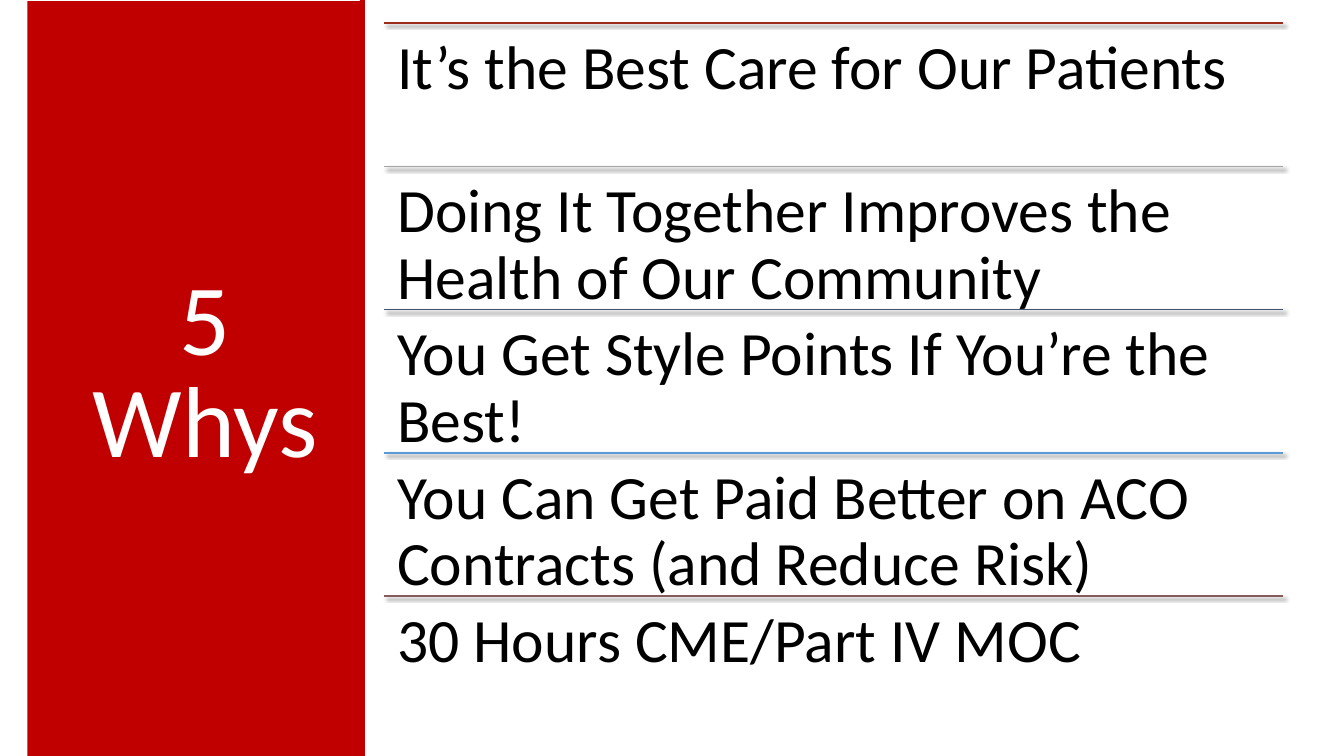
from lxml import etree
from pptx import Presentation
from pptx.dml.color import RGBColor
from pptx.enum import shapes, text
from pptx.oxml import ns
from pptx.util import Cm, Pt

# Content: rule colour, reason, box height in cm
TITLE = "5 Whys"
REASONS = [
    (RGBColor(0x9B, 0x2B, 0x1C), "It’s the Best Care for Our Patients", 3.61),
    (RGBColor(0xA5, 0xA5, 0xA5), "Doing It Together Improves the Health of Our Community", 3.61),
    (RGBColor(0x44, 0x54, 0x6A), "You Get Style Points If You’re the Best!", 2.16),
    (RGBColor(0x5B, 0x9B, 0xD5), "You Can Get Paid Better on ACO Contracts (and Reduce Risk)", 3.61),
    (RGBColor(0x85, 0x5B, 0x5D), "30 Hours CME/Part IV MOC", 3.61),
]

RED = RGBColor(0xC0, 0x00, 0x00)
WHITE = RGBColor(0xFF, 0xFF, 0xFF)
BLACK = RGBColor(0x00, 0x00, 0x00)
FONT = "Calibri"

# Layout in cm
PAGE_WIDTH, PAGE_HEIGHT = 33.87, 19.05
LIST_LEFT, LIST_WIDTH = 9.68, 22.66
LIST_TOP, ROW_PITCH = 0.58, 3.61


def add_panel(page, left, top, width, height):
    panel = page.shapes.add_shape(
        shapes.MSO_SHAPE.RECTANGLE, Cm(left), Cm(top), Cm(width), Cm(height))
    panel.shadow.inherit = False
    panel.fill.solid()
    panel.fill.fore_color.rgb = RED
    panel.line.fill.background()


def add_text(page, place, words, size, color, spacing, inset, anchor, align):
    box = page.shapes.add_textbox(*(Cm(length) for length in place))
    frame = box.text_frame
    frame.word_wrap = True
    frame.vertical_anchor = anchor
    frame.margin_left = frame.margin_right = Cm(inset[0])
    frame.margin_top = frame.margin_bottom = Cm(inset[1])
    para = frame.paragraphs[0]
    para.alignment = align
    para.line_spacing = spacing
    span = para.add_run()
    span.text = words
    span.font.name = FONT
    span.font.size = Pt(size)
    span.font.color.rgb = color


def add_rule(page, top, color):
    rule = page.shapes.add_connector(
        shapes.MSO_CONNECTOR.STRAIGHT,
        Cm(LIST_LEFT), Cm(top), Cm(LIST_LEFT + LIST_WIDTH), Cm(top))
    rule.line.color.rgb = color
    rule.line.width = Pt(1)
    # Soft shadow below the rule
    effects = etree.SubElement(rule.element.spPr, ns.qn("a:effectLst"))
    shadow = etree.SubElement(
        effects, ns.qn("a:outerShdw"), blurRad=str(Pt(3)), dist=str(Pt(2)),
        dir="2700000", algn="tl", rotWithShape="0")
    shade = etree.SubElement(shadow, ns.qn("a:srgbClr"), val=str(BLACK))
    etree.SubElement(shade, ns.qn("a:alpha"), val="60000")


def main():
    deck = Presentation()
    deck.slide_width, deck.slide_height = Cm(PAGE_WIDTH), Cm(PAGE_HEIGHT)
    page = deck.slides.add_slide(deck.slide_layouts[6])

    # Red side panel with the title and its edge strip
    add_panel(page, 0.69, 0.03, 8.43, PAGE_HEIGHT)
    add_text(page, (1.96, 1.45, 6.43, 16.03), TITLE, 72, WHITE, 0.85,
             (0.25, 0.13), text.MSO_ANCHOR.MIDDLE, text.PP_ALIGN.CENTER)
    add_panel(page, 9.07, 0, 0.13, PAGE_HEIGHT)

    # Ruled list of reasons
    for row, (color, reason, height) in enumerate(REASONS):
        top = LIST_TOP + row * ROW_PITCH
        add_rule(page, top, color)
        add_text(page, (LIST_LEFT, top, LIST_WIDTH, height), reason, 44, BLACK, 0.9,
                 (0.33, 0.33), text.MSO_ANCHOR.TOP, text.PP_ALIGN.LEFT)

    deck.save("out.pptx")


if __name__ == "__main__":
    main()
